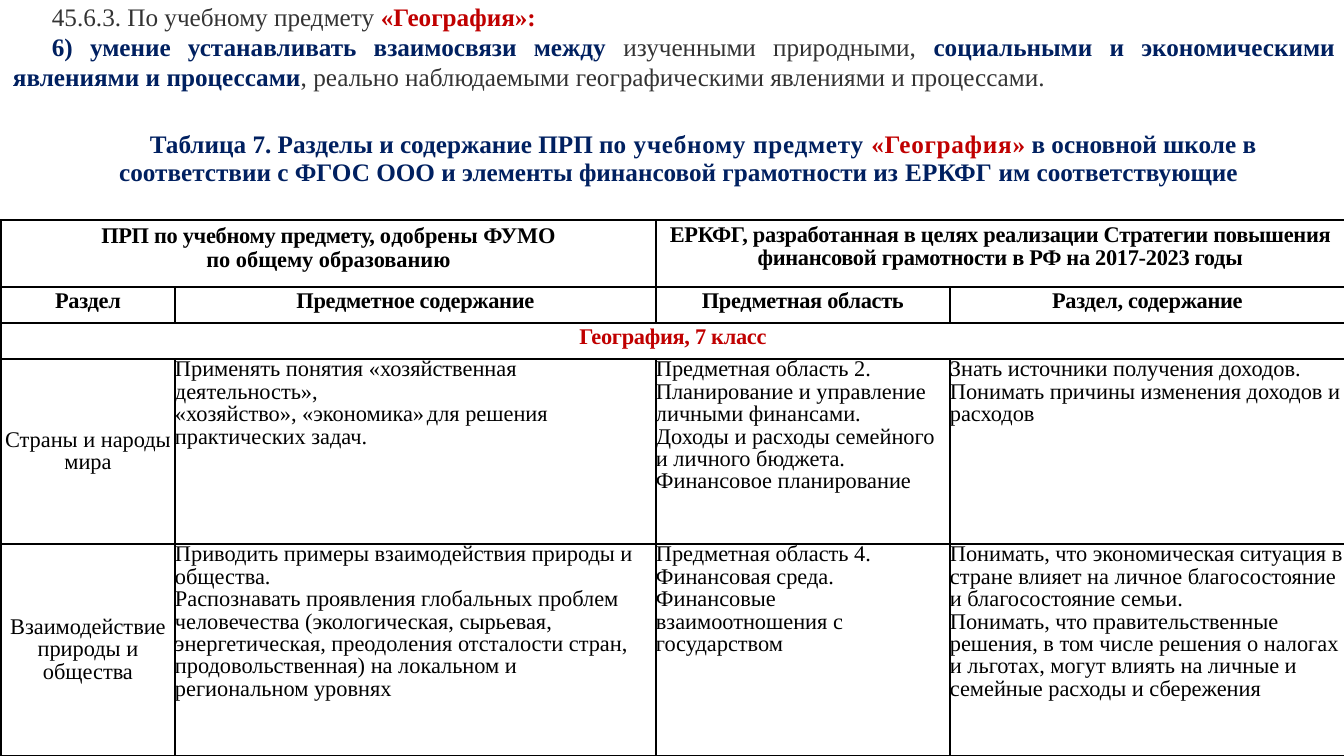
import dataclasses

import pptx
import pptx.dml.color
import pptx.enum.text
import pptx.oxml
import pptx.oxml.ns
import pptx.util

ALIGN = pptx.enum.text.PP_ALIGN
ANCHOR = pptx.enum.text.MSO_ANCHOR
PX = 914400 / 100.8


@dataclasses.dataclass(frozen=True)
class Theme:
    font: str = "Times New Roman"
    heading: int = 18
    body: int = 16
    grey: str = "333333"
    navy: str = "002060"
    red: str = "C00000"
    black: str = "000000"


@dataclasses.dataclass(frozen=True)
class Run:
    text: str
    color: str
    bold: bool = False
    spacing: float = 0


THEME = Theme()
COLUMNS = [174, 481, 294, 395]
ROWS = [67, 36, 36, 185, 212]

INTRO = [
    [Run("45.6.3. По учебному предмету ", THEME.grey),
     Run("«География»:", THEME.red, True)],
    [Run("6) умение устанавливать взаимосвязи между ", THEME.navy, True),
     Run("изученными природными, ", THEME.grey),
     Run("социальными и экономическими явлениями и процессами", THEME.navy, True),
     Run(", реально наблюдаемыми географическими явлениями и процессами.", THEME.grey)],
]
TITLE = [
    Run("Таблица 7. Разделы и содержание ПРП по", THEME.navy, True),
    Run(" учебному предмету ", THEME.navy, True, 0.5),
    Run("«География", THEME.red, True, 0.5),
    Run("» ", THEME.red, True),
    Run("в основной школе в соответствии с ФГОС ООО", THEME.navy, True),
    Run(" и ", THEME.navy, True),
    Run("элементы финансовой грамотности из", THEME.navy, True),
    Run(" ЕРКФГ ", THEME.navy, True, 0.1),
    Run("им соответствующие", THEME.navy, True),
]
PROGRAMME_HEADER = [
    [Run("ПРП по учебному предмету, о", THEME.black, True, -0.2),
     Run("добрены ФУМО", THEME.black, True)],
    [Run("по общему образованию", THEME.black, True)],
]
FRAMEWORK_HEADER = [[Run(
    "ЕРКФГ, разработанная в целях реализации Стратегии повышения "
    "финансовой грамотности в РФ на 2017-2023 годы", THEME.black, True, -0.2)]]
COLUMN_HEADERS = ["Раздел", "Предметное содержание", "Предметная область",
                  "Раздел, содержание"]
GRADE = "География, 7 класс"
SECTIONS = [
    [
        ["Страны и народы мира"],
        ["Применять понятия «хозяйственная деятельность»,",
         "«хозяйство», «экономика»\tдля решения практических задач."],
        ["Предметная область 2. Планирование и управление личными финансами.",
         "Доходы и расходы семейного и личного бюджета.",
         "Финансовое планирование"],
        ["Знать источники получения доходов. "
         "Понимать причины изменения доходов и расходов"],
    ],
    [
        ["Взаимодействие природы и общества"],
        ["Приводить примеры взаимодействия природы и общества.",
         "Распознавать проявления глобальных проблем человечества "
         "(экологическая, сырьевая, энергетическая, преодоления отсталости стран, "
         "продовольственная) на локальном и региональном уровнях"],
        ["Предметная область 4.", "Финансовая среда.",
         "Финансовые взаимоотношения с", "государством"],
        ["Понимать, что экономическая ситуация в стране влияет на личное "
         "благосостояние и благосостояние семьи.",
         "Понимать, что правительственные решения, в том числе решения о налогах "
         "и льготах, могут влиять на личные и семейные расходы и сбережения"],
    ],
]


def px(n):
    return pptx.util.Emu(round(n * PX))


def write(tf, paragraphs, size, align=ALIGN.LEFT, line=1.0, margin=0, indent=0):
    """Fill a text frame; each paragraph is a list of Run."""
    for i, runs in enumerate(paragraphs):
        p = tf.paragraphs[0] if i == 0 else tf.add_paragraph()
        p.alignment = align
        p.line_spacing = line
        if margin or indent:
            pPr = p._p.get_or_add_pPr()
            pPr.set("marL", str(px(margin)))
            pPr.set("indent", str(px(indent)))
        for item in runs:
            r = p.add_run()
            r.text = item.text
            r.font.name = THEME.font
            r.font.size = pptx.util.Pt(size)
            r.font.bold = item.bold
            r.font.color.rgb = pptx.dml.color.RGBColor.from_string(item.color)
            if item.spacing:
                r._r.get_or_add_rPr().set("spc", str(round(item.spacing * 100)))


def fit_frame(tf):
    tf.word_wrap = True
    tf.auto_size = pptx.enum.text.MSO_AUTO_SIZE.SHAPE_TO_FIT_TEXT
    tf.vertical_anchor = ANCHOR.TOP


def add_intro(s):
    tf = s.shapes.add_textbox(px(3), px(-4), px(1342), px(102)).text_frame
    fit_frame(tf)
    write(tf, INTRO, THEME.heading, ALIGN.JUSTIFY, indent=39)


def format_title(s):
    sp = s.shapes.title
    sp.left, sp.top, sp.width, sp.height = px(6), px(127), px(1338), px(66)
    fit_frame(sp.text_frame)
    write(sp.text_frame, [TITLE], THEME.heading, ALIGN.CENTER, 0.9, 7, 49)


def format_cell(cell):
    tcPr = cell._tc.get_or_add_tcPr()
    for side in ("lnL", "lnR", "lnT", "lnB"):
        tcPr.append(pptx.oxml.parse_xml(
            f'<a:{side} {pptx.oxml.ns.nsdecls("a")} w="12700"><a:solidFill>'
            f'<a:srgbClr val="{THEME.black}"/></a:solidFill></a:{side}>'))
    cell.fill.background()


def write_section(table, row, texts):
    for col, lines in enumerate(texts):
        cell = table.cell(row, col)
        cell.margin_left = cell.margin_right = cell.margin_top = cell.margin_bottom = 0
        cell.vertical_anchor = ANCHOR.TOP if col else ANCHOR.MIDDLE
        write(cell.text_frame, [[Run(line, THEME.black)] for line in lines],
              THEME.body, ALIGN.LEFT if col else ALIGN.CENTER, 0.9)


def add_content_table(s):
    table = s.shapes.add_table(len(ROWS), len(COLUMNS), px(1), px(220),
                               px(sum(COLUMNS)), px(sum(ROWS))).table
    table.first_row = table.horz_banding = False
    for column, width in zip(table.columns, COLUMNS):
        column.width = px(width)
    for row, height in zip(table.rows, ROWS):
        row.height = px(height)
    for cell in table.iter_cells():
        format_cell(cell)
    for row, first, last in ((0, 0, 1), (0, 2, 3), (2, 0, 3)):
        table.cell(row, first).merge(table.cell(row, last))

    headers = [(0, 0, PROGRAMME_HEADER, 0.95), (0, 2, FRAMEWORK_HEADER, 0.9),
               (2, 0, [[Run(GRADE, THEME.red, True, -0.2)]], 0.85)]
    headers += [(1, col, [[Run(text, THEME.black, True, -0.2)]], 0.85)
                for col, text in enumerate(COLUMN_HEADERS)]
    for row, col, paragraphs, line in headers:
        write(table.cell(row, col).text_frame, paragraphs, THEME.body,
              ALIGN.CENTER, line)
    for row, texts in enumerate(SECTIONS, start=3):
        write_section(table, row, texts)


def main():
    prs = pptx.Presentation()
    prs.slide_width, prs.slide_height = px(1344), px(756)
    s = prs.slides.add_slide(prs.slide_layouts.get_by_name("Title Only"))
    add_intro(s)
    format_title(s)
    add_content_table(s)
    prs.save("out.pptx")


if __name__ == "__main__":
    main()
